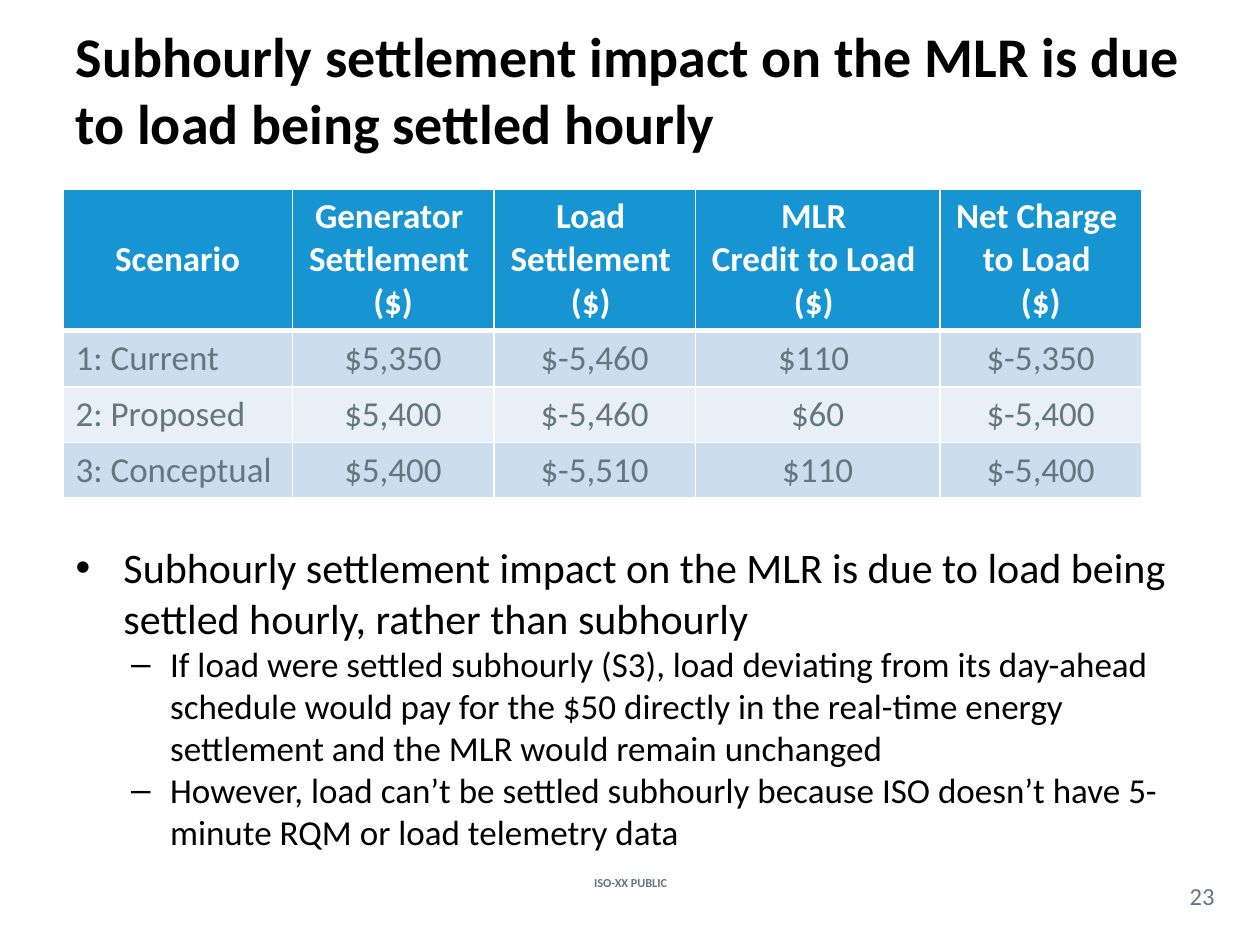
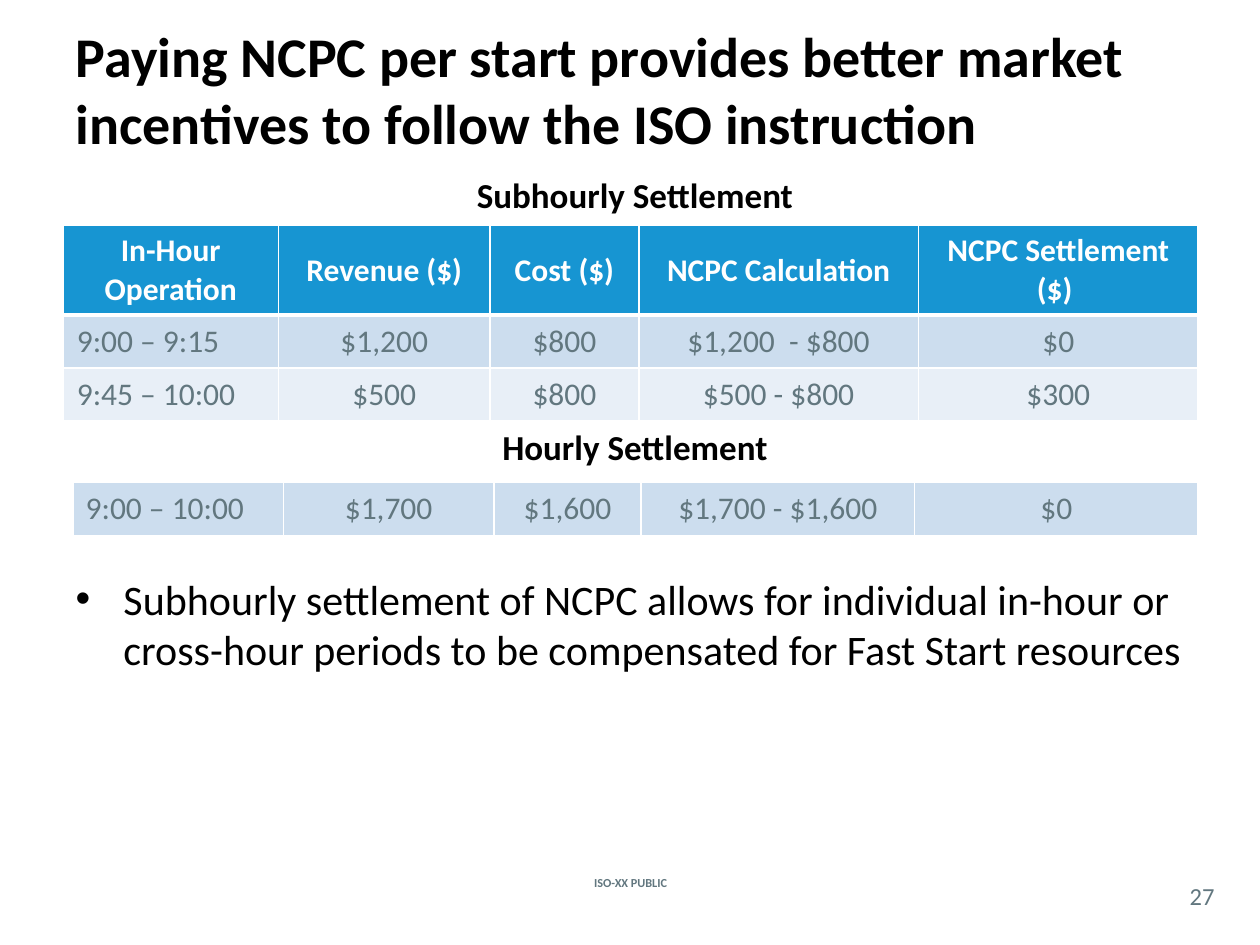
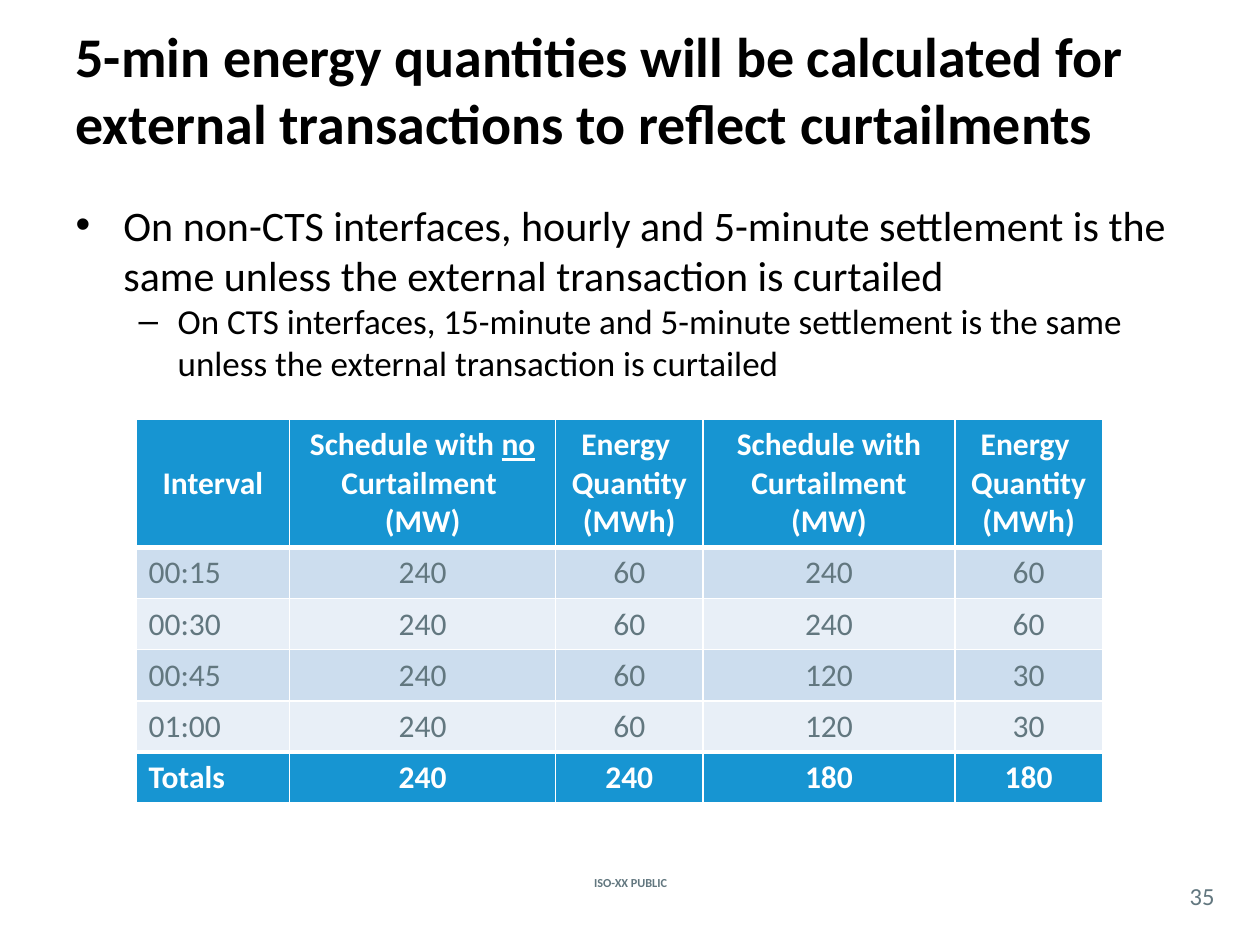
from dataclasses import dataclass

from lxml.etree import SubElement
from pptx import Presentation
from pptx.dml.color import RGBColor
from pptx.enum.text import MSO_ANCHOR, MSO_AUTO_SIZE, PP_ALIGN
from pptx.oxml.ns import qn
from pptx.util import Inches, Pt

FONT = "Calibri"
COLORS = {
    "title": "000000",
    "gray": "62777F",
    "white": "FFFFFF",
    "header": "1795D2",
    "band_dark": "CCDDEE",
    "band_light": "E8EFF7",
}
TITLE_BOX = (0.5, 0.08, 9, 1.25)
FOOTER_BOX = (4.27, 6.92, 1.47, 0.17)
NUMBER_BOX = (9.33, 6.96, 0.42, 0.29)


@dataclass(frozen=True)
class TextStyle:
    size: float
    color: str = "title"
    bold: bool = False


TITLE = TextStyle(32, bold=True)
CAPTION = TextStyle(20, bold=True)
FOOTER = TextStyle(7, "gray", True)
NUMBER = TextStyle(14, "gray")


@dataclass(frozen=True)
class Caption:
    text: str
    box: tuple


@dataclass(frozen=True)
class Bullet:
    text: str
    level: int = 0
    margin: float = 0.38
    hanging: float = 0.38


@dataclass(frozen=True)
class Grid:
    """In cell text, a newline starts a paragraph, \\v breaks a line, and _x_ underlines x."""
    left: float
    top: float
    columns: tuple
    heights: tuple
    rows: tuple
    size: float = 18
    header: bool = True
    totals: bool = False
    side_margin: float = 0.1


@dataclass(frozen=True)
class Page:
    number: int
    title: str
    body_box: tuple
    bullets: tuple
    grids: tuple
    captions: tuple = ()


PAGES = (
    Page(
        23,
        "Subhourly settlement impact on the MLR is due to load being settled hourly",
        (0.5, 4.25, 9, 2.58),
        (
            Bullet("Subhourly settlement impact on the MLR is due to load being "
                   "settled hourly, rather than subhourly"),
            Bullet("If load were settled subhourly (S3), load deviating from its "
                   "day-ahead schedule would pay for the $50 directly in the real-time "
                   "energy settlement and the MLR would remain unchanged", 1, 0.75, 0.31),
            Bullet("However, load can’t be settled subhourly because ISO doesn’t have "
                   "5-minute RQM or load telemetry data", 1, 0.75, 0.31),
        ),
        (Grid(
            0.5, 1.5, (1.82, 1.6, 1.6, 1.94, 1.6), (0.52, 0.45, 0.43, 0.4),
            (
                ("Scenario", "Generator \nSettlement \n($)", "Load \nSettlement \n($) ",
                 "MLR \nCredit to Load \n($) ", "Net Charge \nto Load \n($)"),
                ("1: Current", "$5,350", "$-5,460", "$110 ", "$-5,350"),
                ("2: Proposed", "$5,400", "$-5,460", "$60", "$-5,400"),
                ("3: Conceptual", "$5,400", "$-5,510", "$110", "$-5,400"),
            ),
            size=20,
        ),),
    ),
    Page(
        27,
        "Paying NCPC per start provides better market incentives to follow the "
        "ISO instruction",
        (0.5, 4.5, 9, 2.3),
        (Bullet("Subhourly settlement of NCPC allows for individual in-hour or "
                "cross-hour periods to be compensated for Fast Start resources"),),
        (
            Grid(
                0.58, 3.83, (1.67, 1.67, 1.17, 2.17, 2.25), (0.42,),
                (("9:00 – 10:00", "$1,700", "$1,600", "$1,700 - $1,600", "$0"),),
                header=False,
            ),
            Grid(
                0.5, 1.79, (1.71, 1.68, 1.18, 2.22, 2.22), (0.49, 0.42, 0.42),
                (
                    ("In-Hour Operation", "Revenue ($)", "Cost ($)", "NCPC Calculation",
                     "NCPC Settlement ($) "),
                    ("9:00 – 9:15", "$1,200", "$800", "$1,200  - $800", "$0"),
                    ("9:45 – 10:00", "$500", "$800", "$500 - $800", "$300"),
                ),
                side_margin=0.11,
            ),
        ),
        (
            Caption("Subhourly Settlement", (0.58, 1.33, 8.92, 0.5)),
            Caption("Hourly Settlement", (0.58, 3.33, 8.92, 0.58)),
        ),
    ),
    Page(
        35,
        "5-min energy quantities will be calculated for external transactions to "
        "reflect curtailments",
        (0.5, 1.53, 9, 5.26),
        (
            Bullet("On non-CTS interfaces, hourly and 5-minute settlement is the same "
                   "unless the external transaction is curtailed"),
            Bullet("On CTS interfaces, 15-minute and 5-minute settlement is the same "
                   "unless the external transaction is curtailed", 1, 0.81, 0.31),
        ),
        (Grid(
            1.08, 3.33, (1.22, 2.11, 1.17, 2, 1.17), (0.69, 0.39, 0.39, 0.39, 0.39, 0.38),
            (
                ("Interval", "Schedule with _no_ Curtailment \n(MW)",
                 "Energy \nQuantity\v(MWh)", "Schedule with Curtailment (MW)",
                 "Energy \nQuantity\v(MWh)"),
                ("00:15", "240", "60", "240", "60"),
                ("00:30", "240", "60", "240", "60"),
                ("00:45", "240", "60", "120", "30"),
                ("01:00", "240", "60", "120", "30"),
                ("Totals", "240", "240", "180", "180"),
            ),
            totals=True,
        ),),
    ),
)


def add_span(para, text: str, style: TextStyle, underline: bool = False) -> None:
    span = para.add_run()
    span.text = text
    span.font.name = FONT
    span.font.size = Pt(style.size)
    span.font.bold = style.bold
    span.font.color.rgb = RGBColor.from_string(COLORS[style.color])
    if underline:
        span.font.underline = True


def place(shape, box: tuple) -> None:
    shape.left, shape.top, shape.width, shape.height = map(Inches, box)
    frame = shape.text_frame
    frame.word_wrap = True
    frame.auto_size = MSO_AUTO_SIZE.NONE


def add_label(slide, text: str, box: tuple, style: TextStyle,
              anchor=MSO_ANCHOR.MIDDLE, inset: bool = True) -> None:
    label = slide.shapes.add_textbox(*map(Inches, box))
    place(label, box)
    frame = label.text_frame
    frame.vertical_anchor = anchor
    if not inset:
        frame.margin_left = frame.margin_right = frame.margin_top = frame.margin_bottom = 0
    para = frame.paragraphs[0]
    para.alignment = PP_ALIGN.CENTER
    add_span(para, text, style)


def fill_title(title, text: str) -> None:
    place(title, TITLE_BOX)
    title.text_frame.vertical_anchor = MSO_ANCHOR.MIDDLE
    para = title.text_frame.paragraphs[0]
    para.alignment = PP_ALIGN.LEFT
    add_span(para, text, TITLE)


def fill_body(body, box: tuple, bullets: tuple) -> None:
    place(body, box)
    frame = body.text_frame
    frame.vertical_anchor = MSO_ANCHOR.TOP
    for index, bullet in enumerate(bullets):
        para = frame.add_paragraph() if index else frame.paragraphs[0]
        para.level = bullet.level
        para.space_before = Pt(0)
        properties = para._p.get_or_add_pPr()
        properties.set("marL", str(Inches(bullet.margin)))
        properties.set("indent", str(-Inches(bullet.hanging)))
        SubElement(properties, qn("a:buChar"), char="–" if bullet.level else "•")
        add_span(para, bullet.text, TextStyle(20 if bullet.level else 24))


def set_borders(cell, top: float, bottom: float) -> None:
    properties = cell._tc.get_or_add_tcPr()
    for edge, width in (("L", 1), ("R", 1), ("T", top), ("B", bottom)):
        line = SubElement(properties, qn(f"a:ln{edge}"), w=str(Pt(width)))
        fill = SubElement(line, qn("a:solidFill"))
        SubElement(fill, qn("a:srgbClr"), val=COLORS["white"])


def fill_cell(cell, text: str, style: TextStyle, alignment) -> None:
    frame = cell.text_frame
    for index, paragraph_text in enumerate(text.split("\n")):
        para = frame.add_paragraph() if index else frame.paragraphs[0]
        para.alignment = alignment
        for line_index, line in enumerate(paragraph_text.split("\v")):
            if line_index:
                para.add_line_break()
            for part_index, part in enumerate(line.split("_")):
                add_span(para, part, style, underline=part_index % 2 == 1)


def add_grid(slide, grid: Grid) -> None:
    table = slide.shapes.add_table(
        len(grid.rows), len(grid.columns), Inches(grid.left), Inches(grid.top),
        Inches(sum(grid.columns)), Inches(sum(grid.heights))).table
    table.first_row = grid.header
    table.last_row = grid.totals
    for column, width in zip(table.columns, grid.columns):
        column.width = Inches(width)
    strong_rows = set()
    thick_edges = set()
    if grid.header:
        strong_rows.add(0)
        thick_edges.add(1)
    if grid.totals:
        strong_rows.add(len(grid.rows) - 1)
        thick_edges.add(len(grid.rows) - 1)
    for row_index, values in enumerate(grid.rows):
        table.rows[row_index].height = Inches(grid.heights[row_index])
        strong = row_index in strong_rows
        dark = (row_index - grid.header) % 2 == 0
        fill = "header" if strong else "band_dark" if dark else "band_light"
        style = TextStyle(grid.size, "white" if strong else "gray", strong)
        top, bottom = (3 if edge in thick_edges else 1 for edge in (row_index, row_index + 1))
        for column_index, text in enumerate(values):
            cell = table.cell(row_index, column_index)
            cell.vertical_anchor = MSO_ANCHOR.MIDDLE
            cell.margin_left = cell.margin_right = Inches(grid.side_margin)
            set_borders(cell, top, bottom)
            cell.fill.solid()
            cell.fill.fore_color.rgb = RGBColor.from_string(COLORS[fill])
            is_header = grid.header and row_index == 0
            centered = is_header or column_index > 0
            fill_cell(cell, text, style, PP_ALIGN.CENTER if centered else PP_ALIGN.LEFT)


def add_page(deck, page: Page) -> None:
    slide = deck.slides.add_slide(deck.slide_layouts[1])
    add_label(slide, "ISO-XX PUBLIC", FOOTER_BOX, FOOTER)
    add_label(slide, str(page.number), NUMBER_BOX, NUMBER, inset=False)
    fill_title(slide.shapes.title, page.title)
    fill_body(slide.placeholders[1], page.body_box, page.bullets)
    for caption in page.captions:
        add_label(slide, caption.text, caption.box, CAPTION, MSO_ANCHOR.TOP)
    for grid in page.grids:
        add_grid(slide, grid)


def main() -> None:
    deck = Presentation()
    deck.slide_width, deck.slide_height = Inches(10), Inches(7.5)
    for page in PAGES:
        add_page(deck, page)
    deck.save("out.pptx")


if __name__ == "__main__":
    main()
